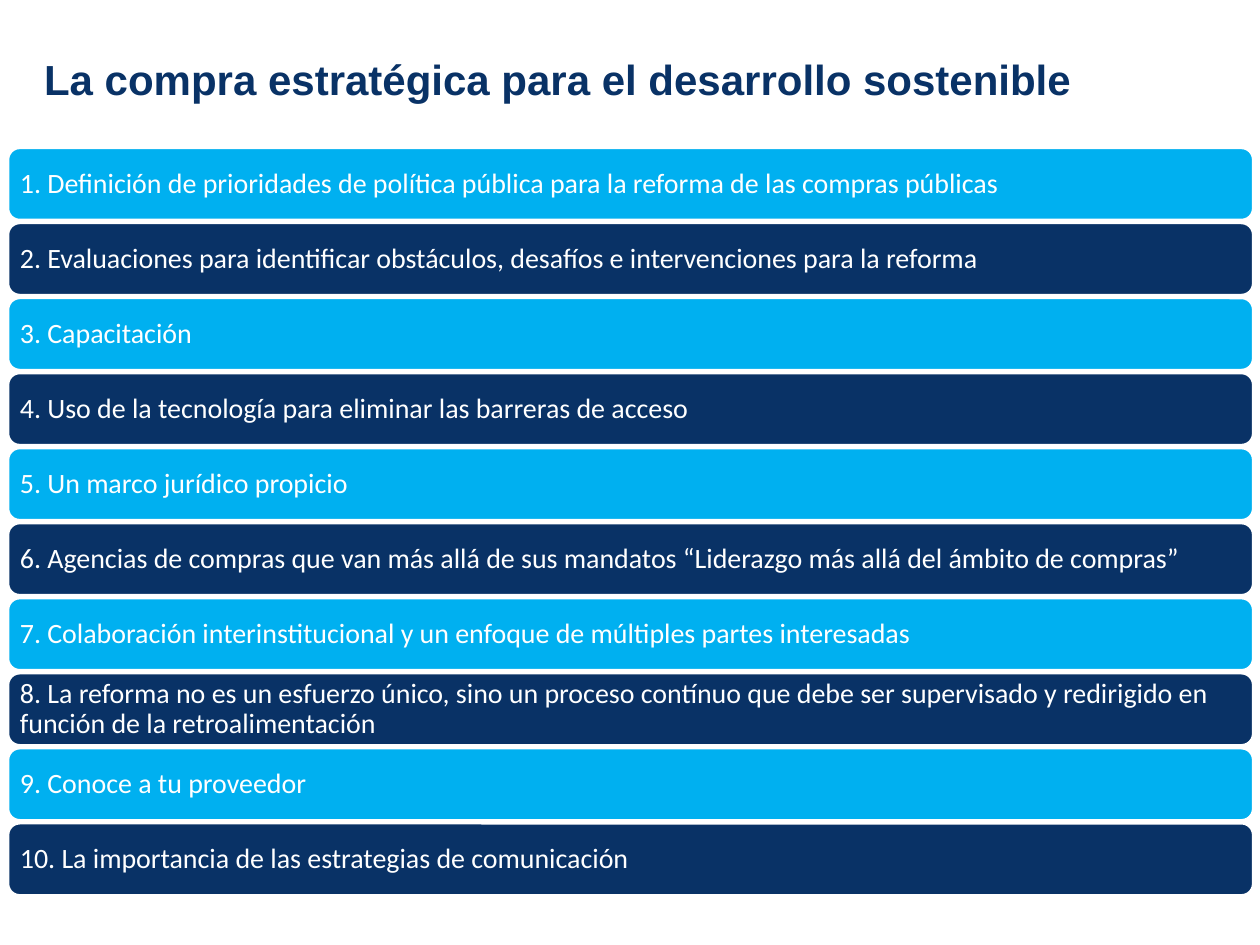
"""Build the slide on strategic procurement as ten alternating bars."""
from dataclasses import dataclass

from pptx import Presentation
from pptx.dml.color import RGBColor
from pptx.enum.shapes import MSO_SHAPE
from pptx.enum.text import MSO_ANCHOR, MSO_AUTO_SIZE, PP_ALIGN
from pptx.slide import Slide
from pptx.text.text import TextFrame
from pptx.util import Inches, Pt


@dataclass(frozen=True)
class Theme:
    navy: RGBColor = RGBColor(0x09, 0x32, 0x66)
    sky: RGBColor = RGBColor(0x00, 0xB0, 0xF0)
    white: RGBColor = RGBColor(0xFF, 0xFF, 0xFF)
    title_font: str = "Arial"
    body_font: str = "Calibri"
    title_size: Pt = Pt(24)
    body_size: Pt = Pt(16)
    outline: Pt = Pt(2)


@dataclass(frozen=True)
class Bar:
    text: str
    top: float
    fill: RGBColor


THEME = Theme()
TITLE = "La compra estratégica para el desarrollo sostenible"
TOPICS = (
    "Definición de prioridades de política pública para la reforma de las compras públicas",
    "Evaluaciones para identificar obstáculos, desafíos e intervenciones para la reforma",
    "Capacitación",
    "Uso de la tecnología para eliminar las barreras de acceso",
    "Un marco jurídico propicio",
    "Agencias de compras que van más allá de sus mandatos “Liderazgo más allá del ámbito de compras”",
    "Colaboración interinstitucional y un enfoque de múltiples partes interesadas",
    "La reforma no es un esfuerzo único, sino un proceso contínuo que debe ser supervisado "
    "y redirigido en función de la retroalimentación",
    "Conoce a tu proveedor",
    "La importancia de las estrategias de comunicación",
)
BAR_LEFT, BAR_WIDTH, BAR_HEIGHT = 0.06, 9.89, 0.58
FIRST_TOP, LAST_TOP = 1.17, 6.53
PITCH = (LAST_TOP - FIRST_TOP) / (len(TOPICS) - 1)


def apply(target: object, values: dict) -> None:
    """Set each named attribute on the target."""
    for name, value in values.items():
        setattr(target, name, value)


def write(tf: TextFrame, text: str, font: dict, para: dict) -> None:
    """Fill a frame with one left-aligned, vertically centred paragraph."""
    apply(tf, {"word_wrap": True, "auto_size": MSO_AUTO_SIZE.NONE,
               "vertical_anchor": MSO_ANCHOR.MIDDLE})
    p = tf.paragraphs[0]
    apply(p, {"alignment": PP_ALIGN.LEFT, **para})
    r = p.add_run()
    r.text = text
    r.font.color.rgb = font["color"]
    apply(r.font, {k: v for k, v in font.items() if k != "color"})


def add_title(s: Slide) -> None:
    """Place and format the title placeholder."""
    sp = s.shapes.title
    apply(sp, {"left": Inches(0.25), "top": Inches(0),
               "width": Inches(8.56), "height": Inches(1.25)})
    write(sp.text_frame, TITLE,
          {"name": THEME.title_font, "size": THEME.title_size,
           "bold": True, "color": THEME.navy}, {})


def add_bar(s: Slide, bar: Bar) -> None:
    """Draw one rounded bar with its text."""
    sp = s.shapes.add_shape(MSO_SHAPE.ROUNDED_RECTANGLE, Inches(BAR_LEFT), Inches(bar.top),
                            Inches(BAR_WIDTH), Inches(BAR_HEIGHT))
    sp.shadow.inherit = False
    sp.fill.solid()
    sp.fill.fore_color.rgb = bar.fill
    sp.line.color.rgb = THEME.white
    sp.line.width = THEME.outline
    tf = sp.text_frame
    sides = ("left", "top", "right", "bottom")
    apply(tf, {f"margin_{side}": Inches(0.07) for side in sides})
    write(tf, bar.text,
          {"name": THEME.body_font, "size": THEME.body_size, "color": THEME.white},
          {"line_spacing": 0.9})


def main() -> None:
    """Assemble and save the presentation."""
    prs = Presentation()
    apply(prs, {"slide_width": Inches(10), "slide_height": Inches(7.5)})
    s = prs.slides.add_slide(prs.slide_layouts[5])
    add_title(s)
    fills = (THEME.sky, THEME.navy)
    for i, topic in enumerate(TOPICS):
        add_bar(s, Bar(f"{i + 1}. {topic}", FIRST_TOP + i * PITCH, fills[i % 2]))
    prs.save("out.pptx")


if __name__ == "__main__":
    main()
